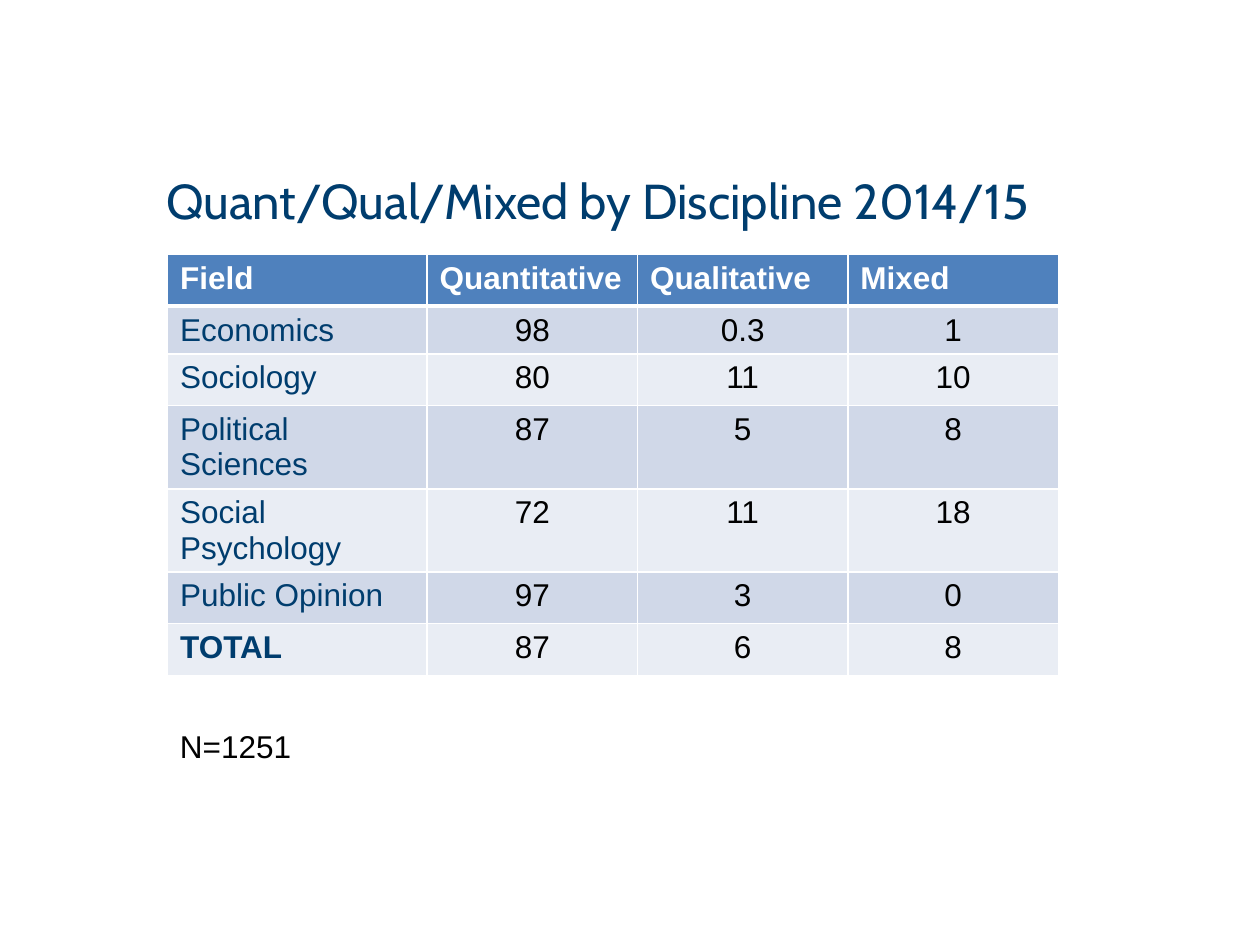
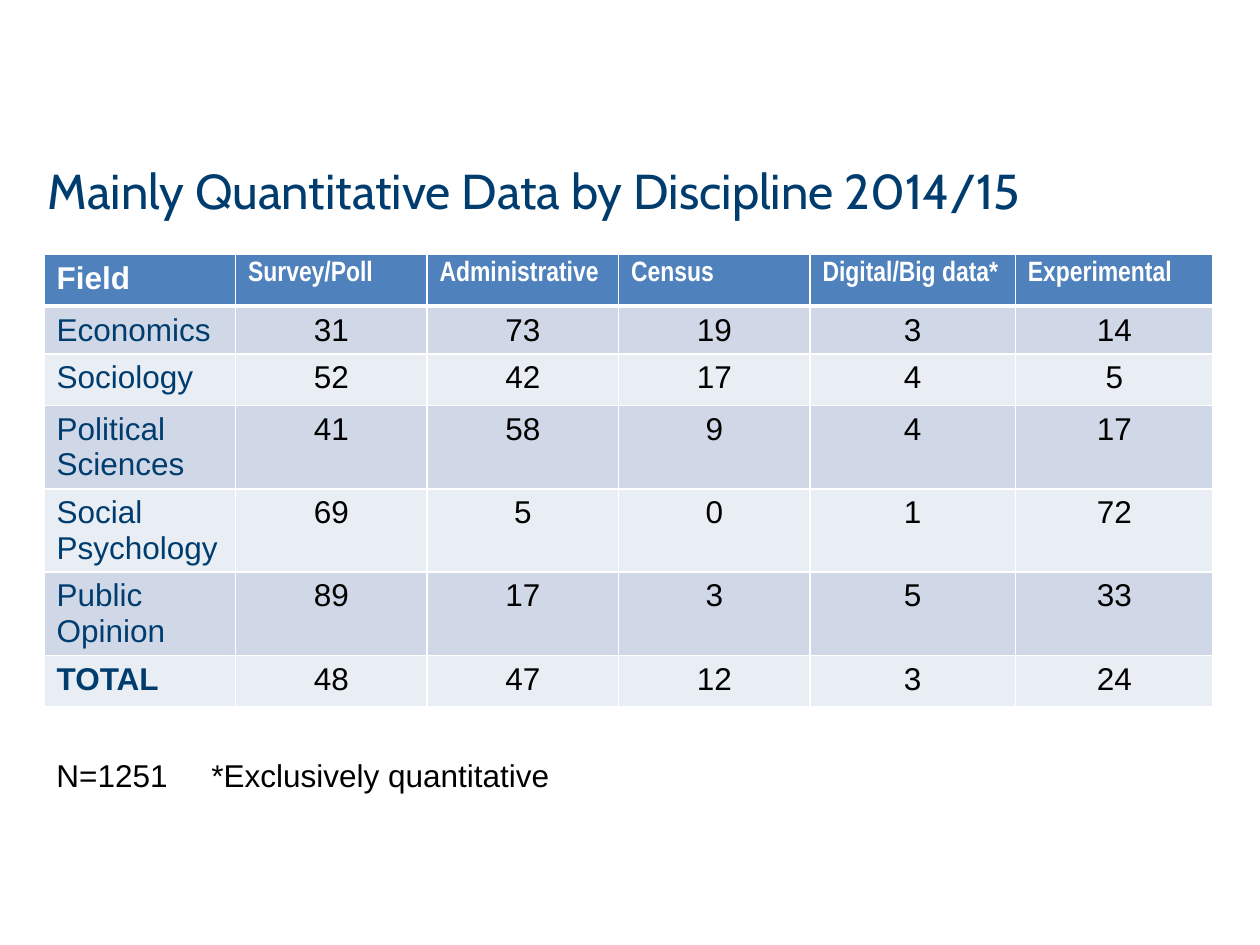
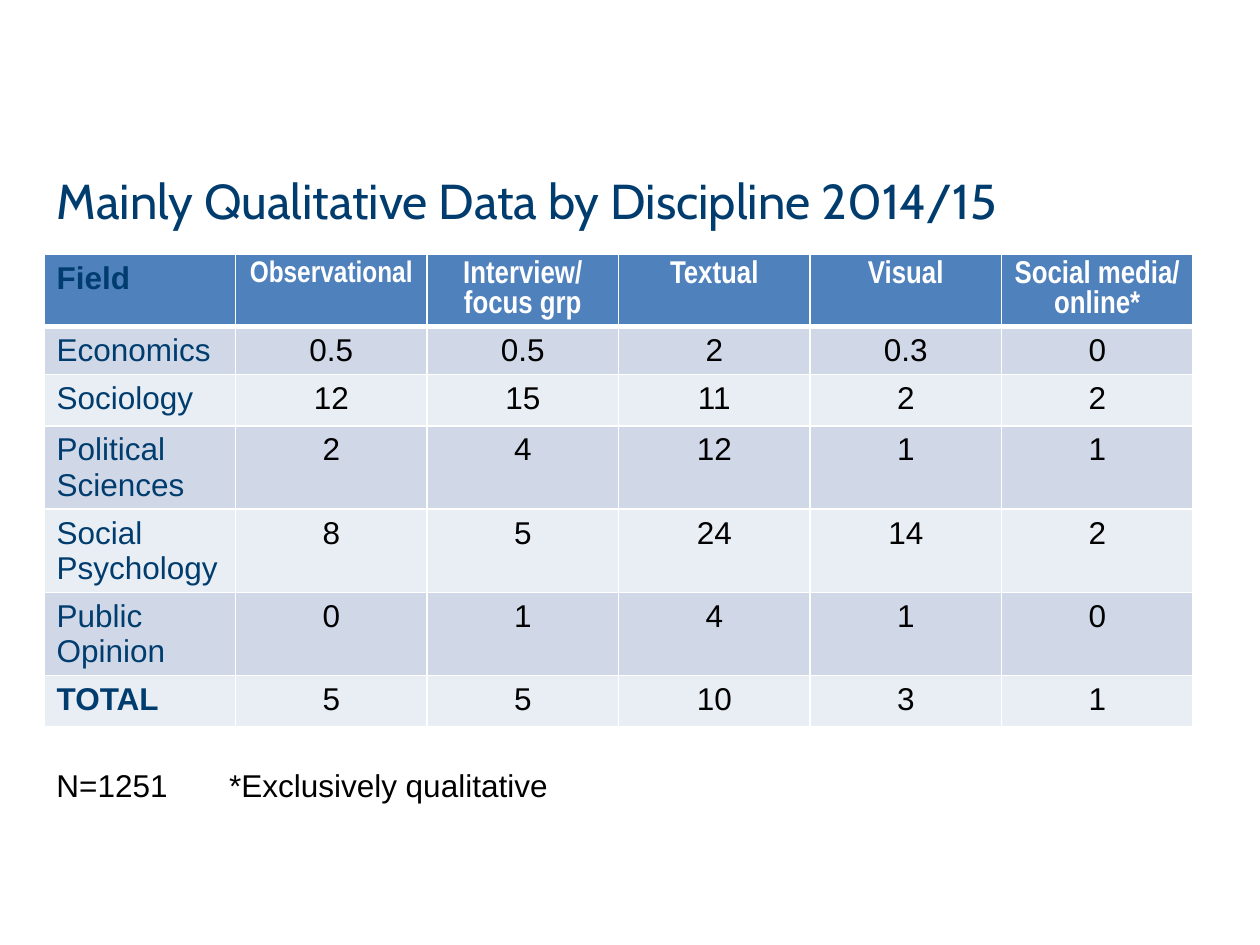
from lxml import etree
from pptx import Presentation
from pptx.dml.color import RGBColor
from pptx.enum import text
from pptx.oxml import ns
from pptx.util import Inches, Pt

# Shared colours, fonts and rows
NAVY, BLACK, WHITE = "003D6E", "000000", "FFFFFF"
HEAD, BANDS = "4F81BD", ("D0D8E8", "E9EDF4")
SANS, NARROW, DISPLAY = "Arial", "Arial Narrow", "Cabin"
LEFT, CENTER = text.PP_ALIGN.LEFT, text.PP_ALIGN.CENTER
FIELDS = ["Economics", "Sociology", "Political Sciences",
          "Social Psychology", "Public Opinion", "TOTAL"]
HEIGHTS = [0.41, 0.22] + [0.41] * 5


def write(frame, words, size=18, font=SANS, color=BLACK, bold=False,
          align=LEFT, tab=None):
    """Fill a text frame and format every paragraph."""
    frame.text = words
    for para in frame.paragraphs:
        para.alignment = align
        if tab:
            stops = etree.SubElement(para._p.get_or_add_pPr(), ns.qn("a:tabLst"))
            etree.SubElement(stops, ns.qn("a:tab"), pos=str(Inches(tab)), algn="l")
        for run in para.runs:
            run.font.size, run.font.name, run.font.bold = Pt(size), font, bold
            run.font.color.rgb = RGBColor.from_string(color)


def edge(cell, side, width):
    """Draw one white cell border."""
    line = etree.SubElement(cell._tc.get_or_add_tcPr(), ns.qn("a:ln" + side),
                            w=str(Pt(width)))
    fill = etree.SubElement(line, ns.qn("a:solidFill"))
    etree.SubElement(fill, ns.qn("a:srgbClr"), val=WHITE)


# What differs from slide to slide
SLIDES = [
    dict(title="Quant/Qual/Mixed by Discipline 2014/15", spot=(1.22, 1.31, 7.48),
         left=1.33, cols=[2.06] + [1.67] * 3,
         heads=["Quantitative", "Qualitative", "Mixed"],
         first=WHITE, style=dict(), sizes=[18] * 3,
         data=[(98, 0.3, 1), (80, 11, 10), (87, 5, 8),
               (72, 11, 18), (97, 3, 0), (87, 6, 8)],
         note="N=1251", box=(5.72, 1.18), tab=None),
    dict(title="Mainly Quantitative Data by Discipline 2014/15", spot=(0.28, 1.23, 9.13),
         left=0.35, cols=[1.52] * 4 + [1.63, 1.57],
         heads=["Survey/Poll", "Administrative", "Census",
                "Digital/Big data*", "Experimental"],
         first=WHITE, style=dict(font=NARROW), sizes=[16] * 5,
         data=[(31, 73, 19, 3, 14), (52, 42, 17, 4, 5), (41, 58, 9, 4, 17),
               (69, 5, 0, 1, 72), (89, 17, 3, 5, 33), (48, 47, 12, 3, 24)],
         note="N=1251\t*Exclusively quantitative", box=(5.95, 7.24), tab=1.23),
    dict(title="Mainly Qualitative Data by Discipline 2014/15", spot=(0.35, 1.31, 9.13),
         left=0.35, cols=[1.52] * 6,
         heads=["Observational", "Interview/\nfocus grp", "Textual",
                "Visual", "Social media/ online*"],
         first=NAVY, style=dict(font=NARROW, align=CENTER), sizes=[17] + [18] * 4,
         data=[(0.5, 0.5, 2, 0.3, 0), (12, 15, 11, 2, 2), (2, 4, 12, 1, 1),
               (8, 5, 24, 14, 2), (0, 1, 4, 1, 0), (5, 5, 10, 3, 1)],
         note="N=1251\t*Exclusively qualitative", box=(6.03, 7.4), tab=1.37),
]

deck = Presentation()
deck.slide_width, deck.slide_height = Inches(10), Inches(7.5)

for item in SLIDES:
    slide = deck.slides.add_slide(deck.slide_layouts[5])

    # Title
    title = slide.shapes.title
    title.left, title.top, title.width = map(Inches, item["spot"])
    title.height = Inches(0.55)
    title.text_frame.vertical_anchor = text.MSO_ANCHOR.MIDDLE
    write(title.text_frame, item["title"], size=28, font=DISPLAY, color=NAVY)

    # Table grid
    cols = item["cols"]
    grid = slide.shapes.add_table(
        len(HEIGHTS), len(cols), Inches(item["left"]), Inches(2.02),
        Inches(sum(cols)), Inches(sum(HEIGHTS))).table
    for col, width in zip(grid.columns, cols):
        col.width = Inches(width)
    for row, height in zip(grid.rows, HEIGHTS):
        row.height = Inches(height)

    # Borders and fills
    for r in range(len(HEIGHTS)):
        for c in range(len(cols)):
            cell = grid.cell(r, c)
            for side in "LRTB":
                thick = (r, side) in ((0, "B"), (1, "T"))
                edge(cell, side, 3 if thick else 1)
            cell.fill.solid()
            shade = BANDS[(r - 1) % 2] if r else HEAD
            cell.fill.fore_color.rgb = RGBColor.from_string(shade)

    # Header row
    write(grid.cell(0, 0).text_frame, "Field", color=item["first"], bold=True)
    for c, (head, size) in enumerate(zip(item["heads"], item["sizes"]), 1):
        write(grid.cell(0, c).text_frame, head, size=size, color=WHITE,
              bold=True, **item["style"])

    # Field names and values
    for r, (field, values) in enumerate(zip(FIELDS, item["data"]), 1):
        write(grid.cell(r, 0).text_frame, field, color=NAVY, bold=field == "TOTAL")
        for c, value in enumerate(values, 1):
            write(grid.cell(r, c).text_frame, str(value), align=CENTER)

    # Note below the table
    top, width = item["box"]
    note = slide.shapes.add_textbox(Inches(item["left"]), Inches(top),
                                    Inches(width), Inches(0.4))
    note.text_frame.word_wrap = True
    note.text_frame.auto_size = text.MSO_AUTO_SIZE.SHAPE_TO_FIT_TEXT
    write(note.text_frame, item["note"], tab=item["tab"])

deck.save("out.pptx")
